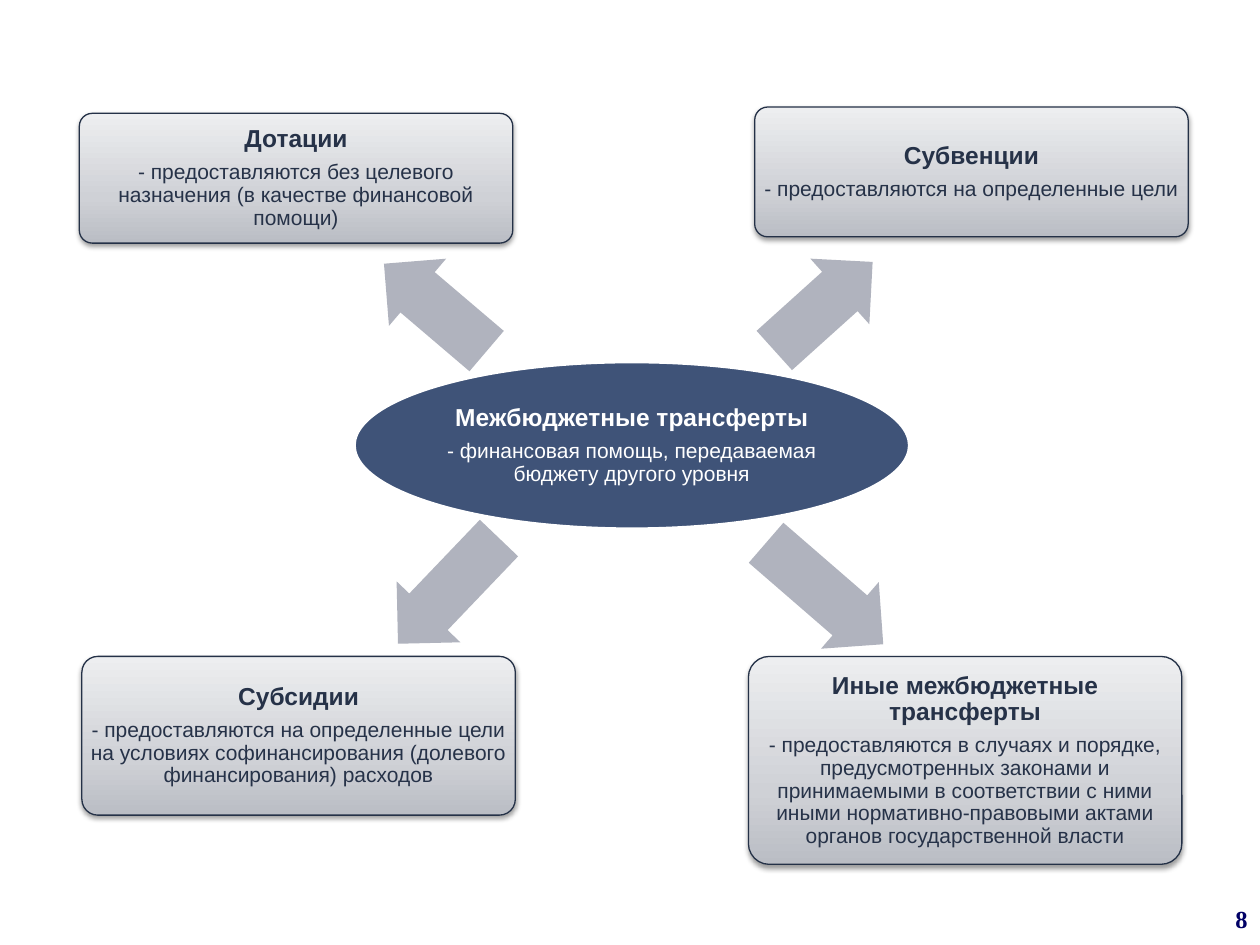
from lxml import etree
from pptx import Presentation
from pptx.dml.color import RGBColor
from pptx.enum.shapes import MSO_SHAPE
from pptx.enum.text import MSO_ANCHOR, PP_ALIGN
from pptx.oxml import parse_xml
from pptx.oxml.ns import nsdecls, qn
from pptx.util import Inches, Pt

ELLIPSE = MSO_SHAPE.OVAL
ROUNDED = MSO_SHAPE.ROUNDED_RECTANGLE
LEFT_ARROW = MSO_SHAPE.LEFT_ARROW
MIDDLE = MSO_ANCHOR.MIDDLE
CENTER, RIGHT = PP_ALIGN.CENTER, PP_ALIGN.RIGHT

CARD_GRADIENT = f"""<a:gradFill {nsdecls("a")} rotWithShape="1"><a:gsLst>
<a:gs pos="0"><a:srgbClr val="BABDC4"/></a:gs>
<a:gs pos="35000"><a:srgbClr val="CFD1D6"/></a:gs>
<a:gs pos="100000"><a:srgbClr val="EDEEF0"/></a:gs>
</a:gsLst><a:lin ang="16200000" scaled="0"/></a:gradFill>"""
CARD_SHADOW = f"""<a:effectLst {nsdecls("a")}>
<a:outerShdw blurRad="39370" dist="20320" dir="5400000" rotWithShape="0">
<a:srgbClr val="000000"><a:alpha val="38000"/></a:srgbClr>
</a:outerShdw></a:effectLst>"""


def rgb(value):
    return RGBColor.from_string(value)


def write_term(shape, term, meaning, color, inset):
    """Put a bold term and its meaning, centred, inside the shape."""
    frame = shape.text_frame
    frame.word_wrap = True
    frame.vertical_anchor = MIDDLE
    frame.margin_left = frame.margin_right = Inches(inset)
    frame.margin_top = frame.margin_bottom = Inches(inset)
    frame.text = f"{term}\n{meaning}"
    for para, size, bold in zip(frame.paragraphs, (14, 12), (True, False)):
        para.alignment = CENTER
        para.line_spacing = 0.9
        para.space_after = Pt(5)
        para.font.name = "Arial"
        para.font.size = Pt(size)
        para.font.bold = bold
        para.font.color.rgb = rgb(color)


deck = Presentation()
deck.slide_width, deck.slide_height = Inches(10), Inches(7.5)
page = deck.slides.add_slide(deck.slide_layouts[6])

# Central concept
hub = page.shapes.add_shape(ELLIPSE, Inches(2.81), Inches(2.87), Inches(4.41), Inches(1.33))
hub.shadow.inherit = False
hub.fill.solid()
hub.fill.fore_color.rgb = rgb("3F5378")
hub.line.color.rgb = rgb("FFFFFF")
hub.line.width = Pt(2)
write_term(hub, "Межбюджетные трансферты",
           "- финансовая помощь, передаваемая бюджету другого уровня", "FFFFFF", 0.01)

# Arrows from the centre: left, top, width, rotation
arrows = [
    (2.98, 4.34, 1.16, 313.7),
    (2.92, 2.09, 1.07, 40.4),
    (6.01, 2.08, 1.05, 138),
    (5.93, 4.36, 1.23, 220.9),
]
for left, top, width, rotation in arrows:
    arrow = page.shapes.add_shape(LEFT_ARROW, Inches(left), Inches(top), Inches(width), Inches(0.7))
    arrow.adjustments[0] = 0.6
    arrow.adjustments[1] = 0.5
    arrow.rotation = rotation
    arrow.shadow.inherit = False
    arrow.fill.solid()
    arrow.fill.fore_color.rgb = rgb("B0B3BE")
    arrow.line.fill.background()

# Kinds of transfers: left, top, height, term, meaning
cards = [
    (0.65, 5.21, 1.26, "Субсидии",
     "- предоставляются на определенные цели на условиях софинансирования "
     "(долевого финансирования) расходов"),
    (0.63, 0.9, 1.03, "Дотации",
     "- предоставляются без целевого назначения (в качестве финансовой помощи)"),
    (5.99, 0.85, 1.03, "Субвенции",
     "- предоставляются на определенные цели"),
    (5.94, 5.21, 1.65, "Иные межбюджетные трансферты",
     "- предоставляются в случаях и порядке, предусмотренных законами и принимаемыми "
     "в соответствии с ними иными нормативно-правовыми актами органов государственной власти"),
]
for left, top, height, term, meaning in cards:
    card = page.shapes.add_shape(ROUNDED, Inches(left), Inches(top), Inches(3.44), Inches(height))
    card.adjustments[0] = 0.1
    properties = card.element.find(qn("p:spPr"))
    properties.append(parse_xml(CARD_GRADIENT))
    card.line.color.rgb = rgb("243147")
    card.line.width = Pt(0.75)
    properties.append(parse_xml(CARD_SHADOW))
    write_term(card, term, meaning, "263248", 0.03)

# Page number, as a slide number field
number_box = page.shapes.add_textbox(Inches(7.75), Inches(7.09), Inches(2.25), Inches(0.41))
number_box.text_frame.word_wrap = True
number_box.text_frame.vertical_anchor = MIDDLE
para = number_box.text_frame.paragraphs[0]
span = para.add_run()
span.text = "8"
para.alignment = RIGHT
para.font.name = "Times New Roman"
para.font.size = Pt(14)
para.font.bold = True
para.font.color.rgb = rgb("000066")

deck.save("out.pptx")
